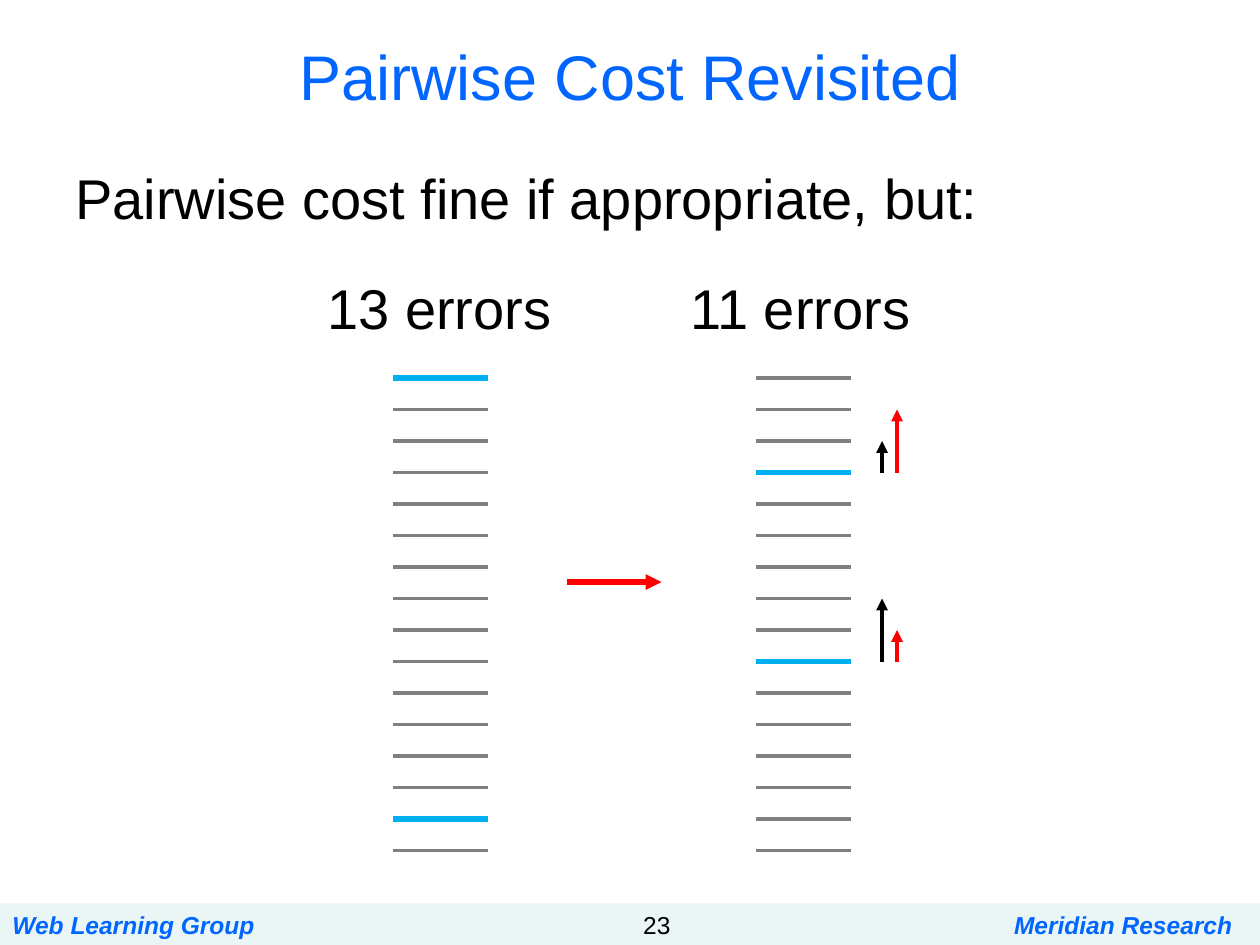
import pptx
import pptx.dml.color
import pptx.enum.shapes
import pptx.enum.text
import pptx.util
from lxml import etree
from pptx.oxml.ns import qn
from pptx.util import Inches

ALIGN = pptx.enum.text.PP_ALIGN
ANCHOR = pptx.enum.text.MSO_ANCHOR
BLUE, CYAN, GRAY, RED, BLACK = "0066FF", "00B0F0", "808080", "FF0000", "000000"


def rgb(hex_code):
    return pptx.dml.color.RGBColor.from_string(hex_code)


class SlideBuilder:
    """Holds the common text style and the slide being drawn."""

    font = {"name": "Arial", "bold": False, "italic": False}

    def __init__(self, slide):
        self.slide = slide

    def text(self, words, left, top, width, height, size, color=BLACK,
             align=ALIGN.LEFT, anchor=ANCHOR.TOP, **font_values):
        box = self.slide.shapes.add_textbox(
            Inches(left), Inches(top), Inches(width), Inches(height))
        frame = box.text_frame
        frame.word_wrap = True
        frame.vertical_anchor = anchor
        paragraph = frame.paragraphs[0]
        paragraph.alignment = align
        run = paragraph.add_run()
        run.text = words
        values = {**self.font, "size": pptx.util.Pt(size), **font_values}
        for name, value in values.items():
            setattr(run.font, name, value)
        run.font.color.rgb = rgb(color)

    def band(self, left, top, width, height, color, opacity):
        """Draw a borderless rectangle; opacity is in percent."""
        band = self.slide.shapes.add_shape(
            pptx.enum.shapes.MSO_SHAPE.RECTANGLE,
            Inches(left), Inches(top), Inches(width), Inches(height))
        band.shadow.inherit = False
        band.line.fill.background()
        band.fill.solid()
        band.fill.fore_color.rgb = rgb(color)
        color_node = band.fill._xPr.find(".//" + qn("a:srgbClr"))
        etree.SubElement(color_node, qn("a:alpha"), val=str(opacity * 1000))

    def line(self, x1, y1, x2, y2, color, weight=2.25, arrow=False):
        line = self.slide.shapes.add_connector(
            pptx.enum.shapes.MSO_CONNECTOR.STRAIGHT,
            Inches(x1), Inches(y1), Inches(x2), Inches(y2))
        line.line.color.rgb = rgb(color)
        line.line.width = pptx.util.Pt(weight)
        if arrow:
            etree.SubElement(line.line._get_or_add_ln(), qn("a:tailEnd"), type="triangle")
        etree.SubElement(line._element.spPr, qn("a:effectLst"))

    def ranking(self, left, relevant_ranks):
        """Draw a ranked list of results, with the relevant ones highlighted."""
        for rank in range(16):
            color, weight = (CYAN, 3) if rank in relevant_ranks else (GRAY, 2.25)
            y = rank_y(rank)
            self.line(left, y, left + 0.75, y, color, weight)


def rank_y(rank):
    return 3 + 0.25 * rank


def main():
    deck = pptx.Presentation()
    deck.slide_width, deck.slide_height = Inches(10), Inches(7.5)
    builder = SlideBuilder(deck.slides.add_slide(deck.slide_layouts[6]))

    footer_top, footer_height = 7.17, 0.33
    builder.band(0, footer_top, 10, footer_height, "BBE0E3", 30)
    for words, left, width, align, style in (
        ("Meridian Research", 7.83, 2.17, ALIGN.CENTER,
         {"color": BLUE, "bold": True, "italic": True}),
        ("Web Learning Group", 0, 3.5, ALIGN.LEFT,
         {"color": BLUE, "bold": True, "italic": True}),
        ("23", 4.75, 0.67, ALIGN.RIGHT, {}),
    ):
        builder.text(words, left, footer_top, width, footer_height, 14,
                     align=align, **style)

    builder.text("Pairwise Cost Revisited", 0.5, 0.25, 9, 0.7, 36, BLUE,
                 ALIGN.CENTER, ANCHOR.MIDDLE)
    builder.text("Pairwise cost fine if appropriate, but:", 0.5, 1.25, 9, 0.62, 32)

    for errors, label_left, list_left, relevant_ranks in (
        ("13 errors", 2.5, 3.12, (0, 14)),
        ("11 errors", 5.38, 6, (3, 9)),
    ):
        builder.text(errors, label_left, 2.12, 2, 0.63, 32)
        builder.ranking(list_left, relevant_ranks)

    builder.line(4.5, 4.62, 5.25, 4.62, RED, 3, arrow=True)
    for x, color, start_rank, end_rank in (
        (7.12, RED, 3, 1),
        (7.12, RED, 9, 8),
        (7, BLACK, 3, 2),
        (7, BLACK, 9, 7),
    ):
        builder.line(x, rank_y(start_rank), x, rank_y(end_rank), color, arrow=True)

    deck.save("out.pptx")


if __name__ == "__main__":
    main()
